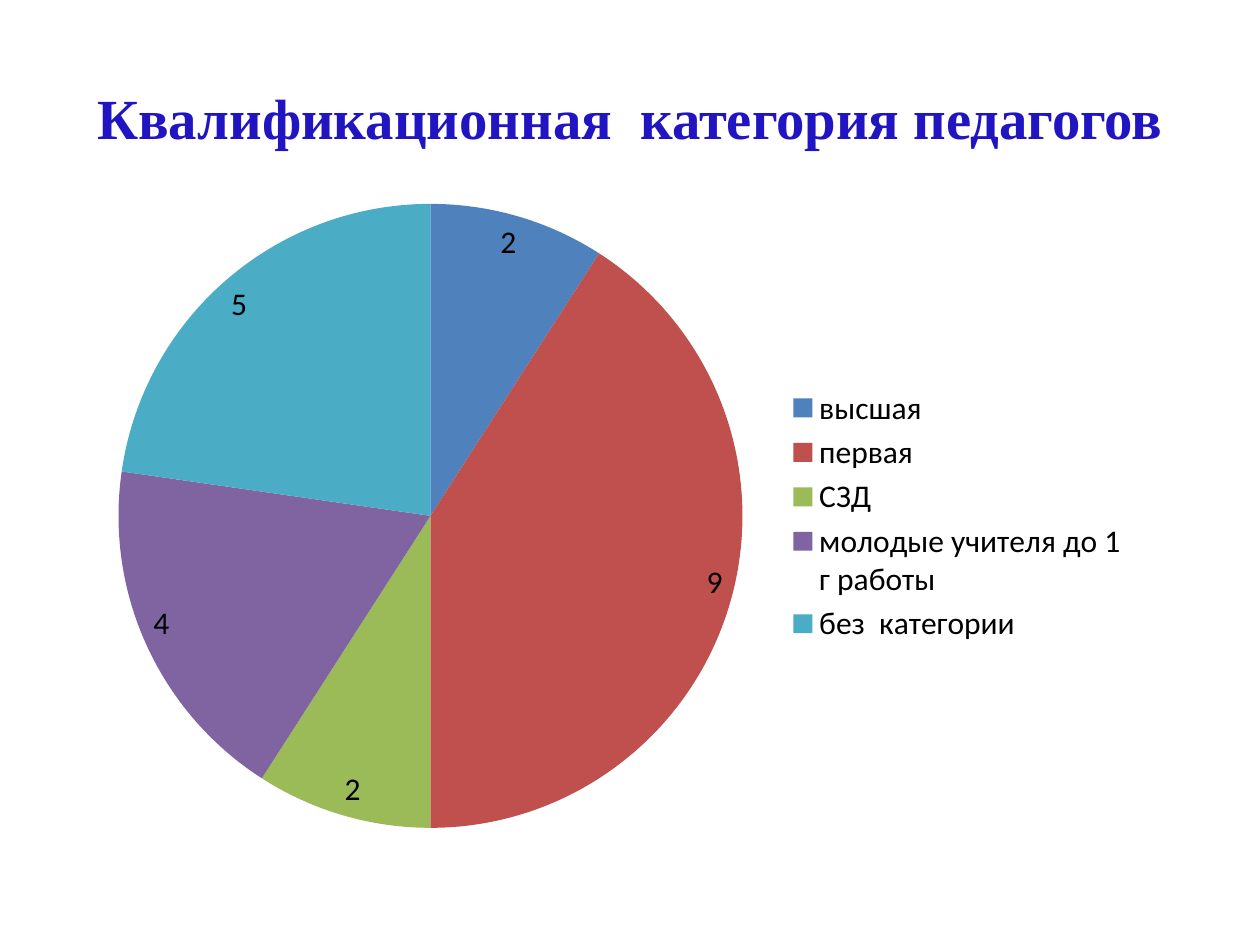
import pptx
import pptx.chart.data
import pptx.dml.color
import pptx.enum.chart
import pptx.enum.text
import pptx.util
from pptx.util import Cm

RGBColor = pptx.dml.color.RGBColor
TITLE_BLUE = RGBColor(0x21, 0x15, 0xC1)
BLACK = RGBColor(0, 0, 0)
BLUE = RGBColor(0x4F, 0x81, 0xBD)
RED = RGBColor(0xC0, 0x50, 0x4D)
GREEN = RGBColor(0x9B, 0xBB, 0x59)
PURPLE = RGBColor(0x80, 0x64, 0xA2)
TEAL = RGBColor(0x4B, 0xAC, 0xC6)

CATEGORIES = [
    ("высшая", 2, BLUE),
    ("первая", 9, RED),
    ("СЗД", 2, GREEN),
    ("молодые учителя до 1 г работы", 4, PURPLE),
    ("без  категории", 5, TEAL),
]


def set_font(font, name, size, color, bold=False):
    font.name = name
    font.size = pptx.util.Pt(size)
    font.color.rgb = color
    font.bold = bold


def add_title(s, text):
    sp = s.shapes.add_textbox(Cm(1.27), Cm(0.76), Cm(22.86), Cm(3.18))
    tf = sp.text_frame
    tf.word_wrap = True
    tf.vertical_anchor = pptx.enum.text.MSO_ANCHOR.MIDDLE
    p = tf.paragraphs[0]
    p.text = text
    p.alignment = pptx.enum.text.PP_ALIGN.CENTER
    set_font(p.font, "Times New Roman", 32.4, TITLE_BLUE, bold=True)


def add_pie(s, categories):
    names, values, colors = zip(*categories)
    data = pptx.chart.data.CategoryChartData()
    data.categories = names
    data.add_series("Series 1", values)
    chart = s.shapes.add_chart(
        pptx.enum.chart.XL_CHART_TYPE.PIE,
        Cm(1.57), Cm(3.76), Cm(21.44), Cm(13.28), data,
    ).chart
    set_font(chart.font, "Calibri", 18, BLACK)
    chart.has_title = False
    chart.has_legend = True
    chart.legend.position = pptx.enum.chart.XL_LEGEND_POSITION.RIGHT
    chart.legend.include_in_layout = False

    plot = chart.plots[0]
    plot.vary_by_categories = True
    plot.has_data_labels = True
    plot.data_labels.show_value = True
    plot.data_labels.show_percentage = False
    plot.data_labels.position = pptx.enum.chart.XL_LABEL_POSITION.INSIDE_END
    for i, color in enumerate(colors):
        fill = plot.series[0].points[i].format.fill
        fill.solid()
        fill.fore_color.rgb = color


def main():
    prs = pptx.Presentation()
    prs.slide_width, prs.slide_height = Cm(25.4), Cm(19.05)
    s = prs.slides.add_slide(prs.slide_layouts[6])
    add_title(s, "Квалификационная  категория педагогов")
    add_pie(s, CATEGORIES)
    prs.save("out.pptx")


if __name__ == "__main__":
    main()
